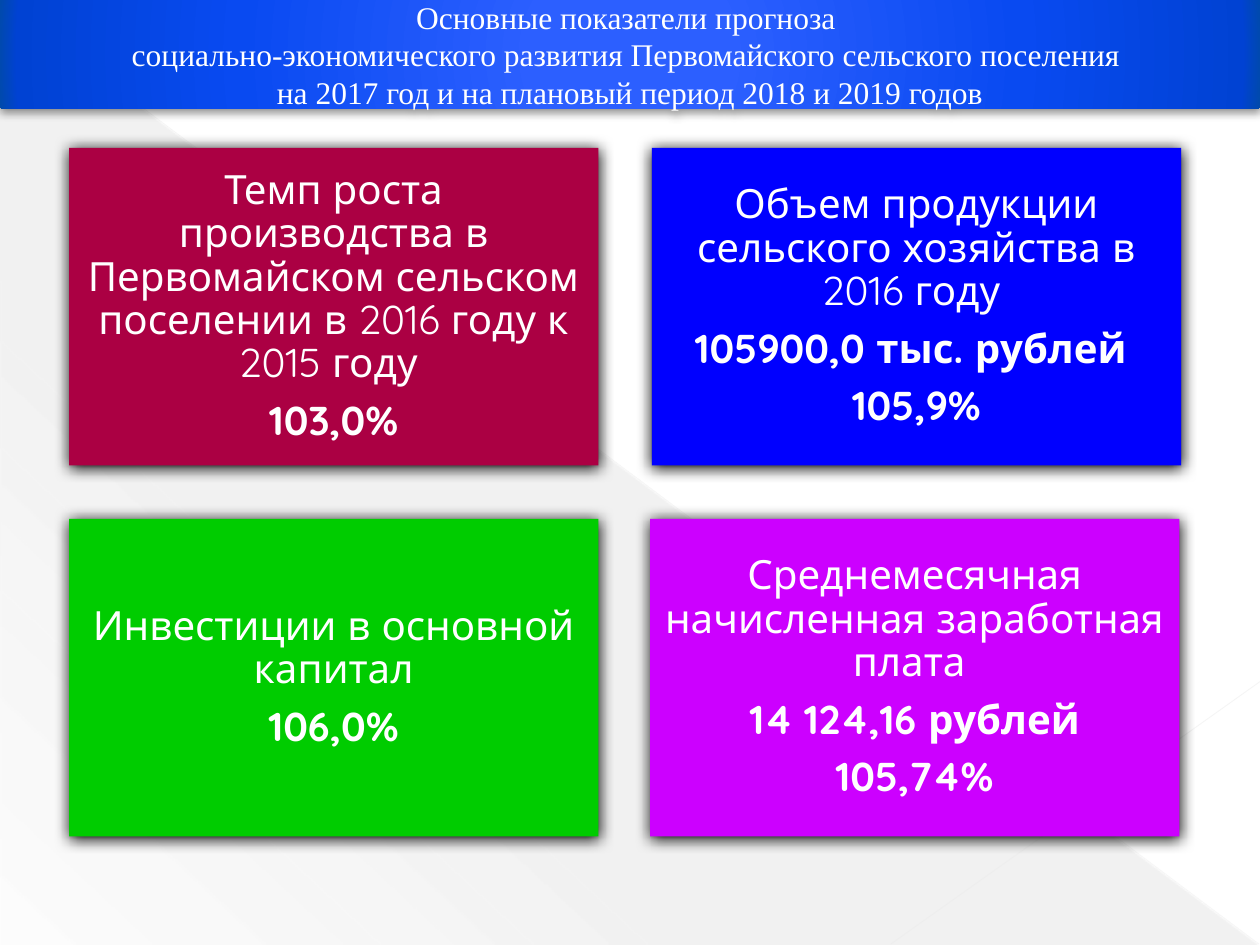
from lxml import etree
from pptx import Presentation
from pptx import util as u
from pptx.dml.color import RGBColor
from pptx.enum import shapes, text
from pptx.oxml import parse_xml
from pptx.oxml.ns import nsdecls, qn

Pt = u.Pt
color = RGBColor.from_string


def set_gradient(shape, stops, direction):
    shape.fill.gradient()
    marks = "".join(
        f'<a:gs pos="{position * 1000}"><a:srgbClr val="{value}">'
        f'<a:alpha val="{opacity * 1000}"/></a:srgbClr></a:gs>'
        for position, value, opacity in stops)
    properties = shape._element.spPr
    properties.replace(properties.find(qn("a:gradFill")), parse_xml(
        f'<a:gradFill {nsdecls("a")} rotWithShape="1">'
        f"<a:gsLst>{marks}</a:gsLst>{direction}</a:gradFill>"))


def add_block(kind, box, shadow=None):
    shape = slide.shapes.add_shape(kind, *map(Pt, box))
    shape.line.fill.background()
    shape.shadow.inherit = False
    if shadow:
        opacity, blur, distance = shadow
        effects = shape._element.spPr.find(qn("a:effectLst"))
        effects.append(parse_xml(
            f'<a:outerShdw {nsdecls("a")} blurRad="{Pt(blur)}" dist="{Pt(distance)}" '
            f'dir="5400000" algn="ctr" rotWithShape="0"><a:srgbClr val="000000">'
            f'<a:alpha val="{opacity * 1000}"/></a:srgbClr></a:outerShdw>'))
    return shape


presentation = Presentation()
presentation.slide_width, presentation.slide_height = Pt(720), Pt(540)
slide = presentation.slides.add_slide(presentation.slide_layouts[6])

triangle = add_block(shapes.MSO_SHAPE.RIGHT_TRIANGLE, (0.5, 1.5, 718.5, 538.5))
set_gradient(triangle, [(0, "666666", 10), (70, "666666", 8), (100, "666666", 1)],
             '<a:lin ang="7980000" scaled="1"/>')

for ends, line_color, width, opacity in [
    ((0, 0.5, 719.5, 539.5), "E8E8E8", 0.39, 35),
    ((720, 389.5, 509, 539.5), "EAEAEA", 0.47, 45),
]:
    line = slide.shapes.add_connector(shapes.MSO_CONNECTOR.STRAIGHT, *map(Pt, ends))
    line.line.width = Pt(width)
    line.line.color.rgb = color(line_color)
    properties = line._element.spPr
    alpha = etree.SubElement(properties.find(".//" + qn("a:srgbClr")), qn("a:alpha"))
    alpha.set("val", str(opacity * 1000))
    etree.SubElement(properties, qn("a:effectLst"))

header = add_block(shapes.MSO_SHAPE.RECTANGLE, (0, 0, 720, 62), (43, 5, 2))
set_gradient(header, [(0, "2D60FF", 100), (15, "2C5FFF", 100), (62, "094AF1", 100),
                      (97, "0042D3", 100), (100, "004AAB", 100)],
             '<a:path path="circle"><a:fillToRect l="50000" t="50000" r="50000" b="50000"/></a:path>')

title_font = {"name": "Times New Roman", "size": Pt(18), "bold": False}
card_font = {"name": "Quicksand", "size": Pt(23), "bold": False}
title_layout = {"alignment": text.PP_ALIGN.CENTER}
card_layout = {**title_layout, "line_spacing": 0.9, "space_after": Pt(8)}
card_margins = {f"margin_{side}": Pt(7.2) for side in ("left", "top", "right", "bottom")}

title = ["Основные показатели прогноза ",
         "социально-экономического развития Первомайского сельского поселения ",
         "на 2017 год и на плановый период 2018 и 2019 годов"]
blocks = [(header, title, title_font, title_layout, {})]

cards = [
    (39.5, 84.5, "AB0043",
     ["Темп роста производства в Первомайском сельском поселении в 2016 году к 2015 году ",
      "103,0%"]),
    (372.5, 84.5, "0000FF",
     ["Объем продукции сельского хозяйства в 2016 году ",
      "105900,0 тыс. рублей ", "105,9%"]),
    (39.5, 296.5, "00CC00", ["Инвестиции в основной капитал", "106,0%"]),
    (371.5, 296.5, "CC00FF",
     ["Среднемесячная начисленная заработная плата ",
      "14 124,16 рублей", "105,74%"]),
]
for left, top, fill, lines in cards:
    card = add_block(shapes.MSO_SHAPE.RECTANGLE, (left, top, 302.5, 181.5), (100, 8.5, 1))
    card.fill.solid()
    card.fill.fore_color.rgb = color(fill)
    blocks.append((card, lines, card_font, card_layout, card_margins))

for shape, lines, font, layout, margins in blocks:
    frame = shape.text_frame
    frame.word_wrap = True
    frame.vertical_anchor = text.MSO_ANCHOR.MIDDLE
    for name, value in margins.items():
        setattr(frame, name, value)
    for index, content in enumerate(lines):
        paragraph = frame.add_paragraph() if index else frame.paragraphs[0]
        for name, value in layout.items():
            setattr(paragraph, name, value)
        run = paragraph.add_run()
        run.text = content
        for name, value in font.items():
            setattr(run.font, name, value)
        run.font.color.rgb = color("FFFFFF")
        if shape is not header and index:
            run.font.bold = True

presentation.save("out.pptx")
